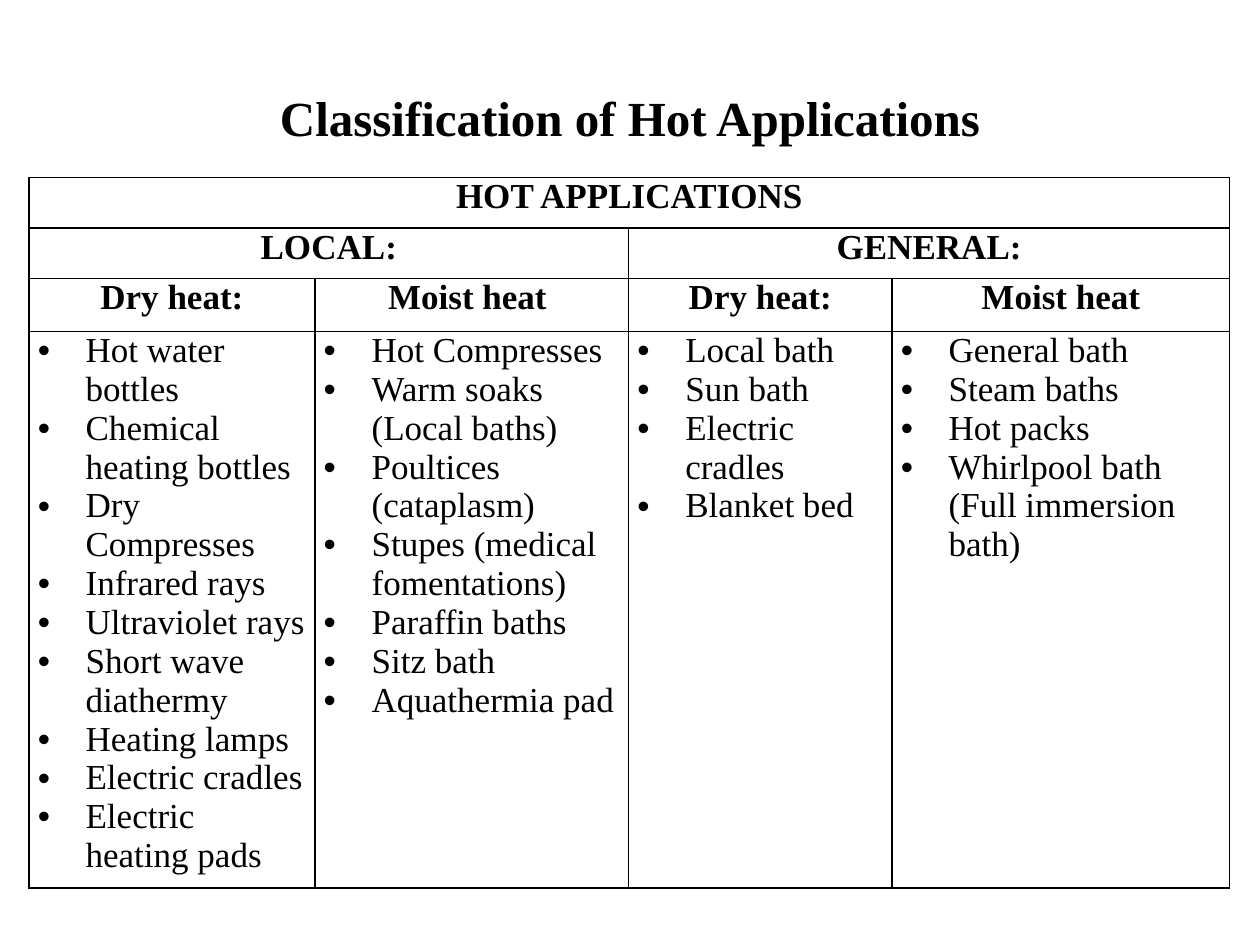
from pptx import Presentation
from pptx.dml.color import RGBColor
from pptx.enum import text
from pptx.oxml import parse_xml
from pptx.oxml.ns import nsdecls
from pptx.util import Inches, Pt

FONT = "Times New Roman"
BLACK = "000000"
COLUMN_WIDTHS = [2.27, 2.49, 2.09, 2.68]
ROW_HEIGHTS = [0.4, 0.4, 0.42, 4.42]

# Header cells: row, first column, last column, wording
HEADERS = [
    (0, 0, 3, "HOT APPLICATIONS"),
    (1, 0, 1, "LOCAL:"),
    (1, 2, 3, "GENERAL:"),
    (2, 0, 0, "Dry heat:"),
    (2, 1, 1, "Moist heat "),
    (2, 2, 2, "Dry heat:"),
    (2, 3, 3, "Moist heat"),
]
LISTS = [
    ["Hot water bottles", "Chemical heating bottles", "Dry Compresses",
     "Infrared rays", "Ultraviolet rays", "Short wave diathermy",
     "Heating lamps", "Electric cradles", "Electric heating pads"],
    ["Hot Compresses", "Warm soaks (Local baths)", "Poultices (cataplasm)",
     "Stupes (medical fomentations)", "Paraffin baths", "Sitz bath",
     "Aquathermia pad"],
    ["Local bath", "Sun bath", "Electric cradles", "Blanket bed"],
    ["General bath", "Steam baths", "Hot packs",
     "Whirlpool bath (Full immersion bath)"],
]


def color(value):
    return RGBColor.from_string(value)


def format_text(frame, size, bold=False, align=text.PP_ALIGN.LEFT):
    for paragraph in frame.paragraphs:
        paragraph.alignment = align
        for span in paragraph.runs:
            span.font.name = FONT
            span.font.size = Pt(size)
            span.font.bold = bold
            span.font.color.rgb = color(BLACK)


def add_bullet(paragraph):
    properties = paragraph._p.get_or_add_pPr()
    indent = Inches(0.38)
    properties.set("marL", str(indent))
    properties.set("indent", str(-indent))
    properties.append(parse_xml(f'<a:buFont {nsdecls("a")} typeface="Arial"/>'))
    properties.append(parse_xml(f'<a:buChar {nsdecls("a")} char="•"/>'))


def style_cell(cell):
    cell.margin_left = cell.margin_right = Inches(0.07)
    cell.margin_top = cell.margin_bottom = 0
    cell.vertical_anchor = text.MSO_ANCHOR.TOP
    cell.fill.background()
    properties = cell._tc.get_or_add_tcPr()
    for index, side in enumerate(["lnL", "lnR", "lnT", "lnB"]):
        properties.insert(index, parse_xml(
            f'<a:{side} {nsdecls("a")} w="{Pt(1)}"><a:solidFill>'
            f'<a:srgbClr val="{BLACK}"/></a:solidFill></a:{side}>'))


def place_title(page, left, top, width, height):
    title = page.shapes.title
    title.left, title.top = Inches(left), Inches(top)
    title.width, title.height = Inches(width), Inches(height)
    frame = title.text_frame
    frame.text = "Classification of Hot Applications"
    frame.vertical_anchor = text.MSO_ANCHOR.MIDDLE
    format_text(frame, 28, True, text.PP_ALIGN.CENTER)


def place_table(page, left, top):
    table = page.shapes.add_table(
        len(ROW_HEIGHTS), len(COLUMN_WIDTHS), Inches(left), Inches(top),
        Inches(sum(COLUMN_WIDTHS)), Inches(sum(ROW_HEIGHTS))).table
    table.first_row = table.horz_banding = False
    for column, width in zip(table.columns, COLUMN_WIDTHS):
        column.width = Inches(width)
    for row, height in zip(table.rows, ROW_HEIGHTS):
        row.height = Inches(height)
    for cell in table.iter_cells():
        style_cell(cell)

    # Headings, merged over the columns they cover
    for row, first, last, wording in HEADERS:
        cell = table.cell(row, first)
        if last > first:
            cell.merge(table.cell(row, last))
        cell.text_frame.text = wording
        format_text(cell.text_frame, 20, True, text.PP_ALIGN.CENTER)

    # Bulleted lists
    for column, items in enumerate(LISTS):
        frame = table.cell(3, column).text_frame
        frame.text = "\n".join(items)
        format_text(frame, 20)
        for paragraph in frame.paragraphs:
            add_bullet(paragraph)


def main():
    deck = Presentation()
    deck.slide_width, deck.slide_height = Inches(10), Inches(7.5)
    page = deck.slides.add_slide(deck.slide_layouts[5])
    place_title(page, 0.5, 0.3, 9, 1.25)
    place_table(page, 0.23, 1.41)
    deck.save("out.pptx")


if __name__ == "__main__":
    main()
